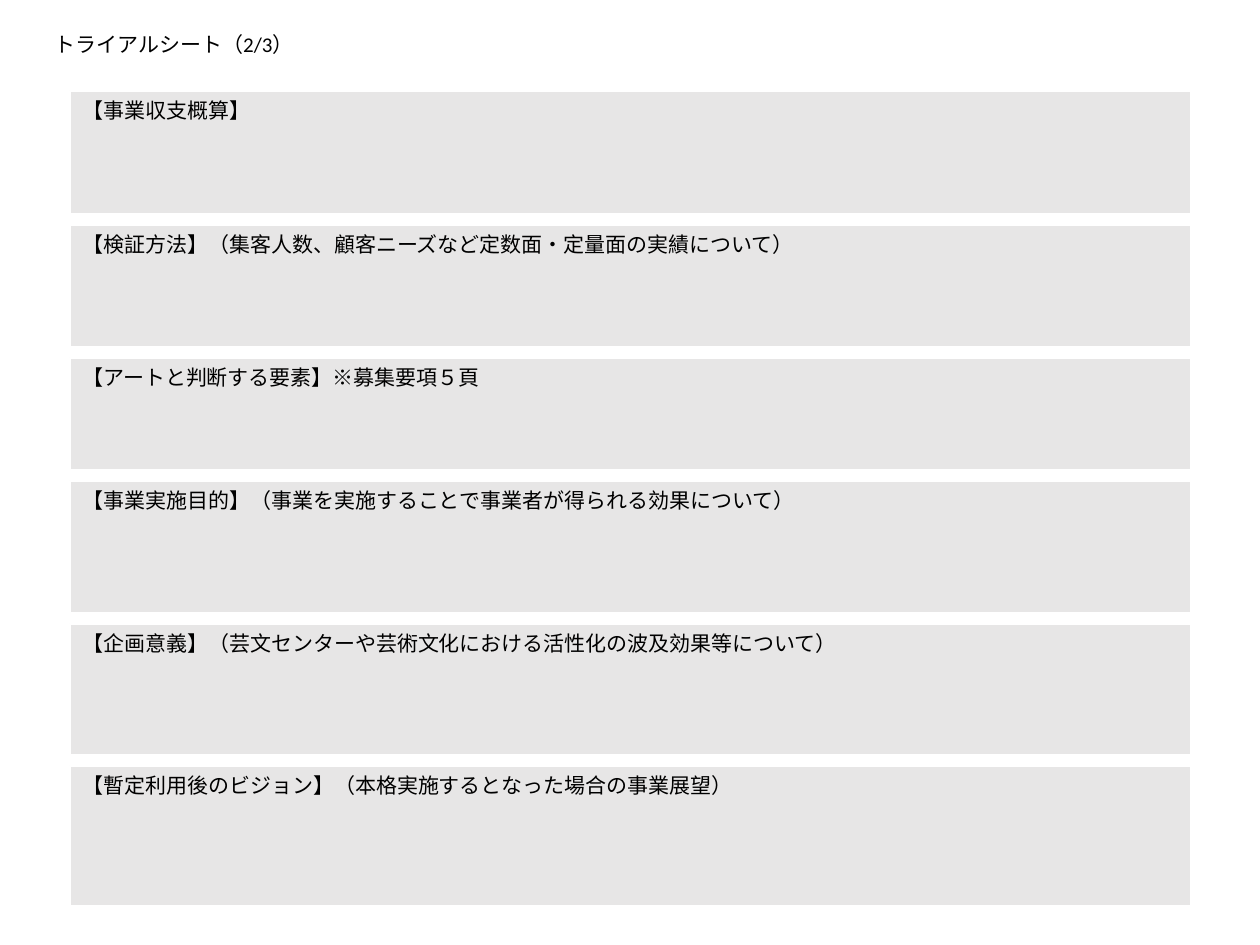
import pptx
import pptx.util
import pptx.dml.color
import pptx.enum.shapes
import pptx.enum.text

PX = pptx.util.Inches(1) // 126
THEME = {
    "font": "Calibri",
    "size": pptx.util.Pt(12),
    "line": pptx.util.Pt(1.5),
    "text": pptx.dml.color.RGBColor.from_string("000000"),
    "panel": pptx.dml.color.RGBColor.from_string("E7E6E6"),
    "border": pptx.dml.color.RGBColor.from_string("FFFFFF"),
}


def write_text(shape, text):
    text_frame = shape.text_frame
    text_frame.text = text
    text_frame.word_wrap = True
    text_frame.vertical_anchor = pptx.enum.text.MSO_ANCHOR.TOP
    paragraph = text_frame.paragraphs[0]
    paragraph.alignment = pptx.enum.text.PP_ALIGN.LEFT
    font = paragraph.runs[0].font
    font.name = THEME["font"]
    font.size = THEME["size"]
    font.color.rgb = THEME["text"]


presentation = pptx.Presentation()
presentation.slide_width = 1260 * PX
presentation.slide_height = 945 * PX
slide = presentation.slides.add_slide(presentation.slide_layouts[6])

# Sheet title
title = slide.shapes.add_textbox(42 * PX, 25 * PX, 269 * PX, 38 * PX)
write_text(title, "トライアルシート（2/3）")

# Answer panels, stacked with an equal gap
panels = [
    ("【事業収支概算】", 123),
    ("【検証方法】（集客人数、顧客ニーズなど定数面・定量面の実績について）", 122),
    ("【アートと判断する要素】※募集要項５頁", 112),
    ("【事業実施目的】（事業を実施することで事業者が得られる効果について）", 132),
    ("【企画意義】（芸文センターや芸術文化における活性化の波及効果等について）", 131),
    ("【暫定利用後のビジョン】（本格実施するとなった場合の事業展望）", 140),
]
gap = 11
top = 91
for heading, height in panels:
    panel = slide.shapes.add_shape(
        pptx.enum.shapes.MSO_SHAPE.RECTANGLE,
        70 * PX, top * PX, 1121 * PX, height * PX)
    panel.shadow.inherit = False
    panel.fill.solid()
    panel.fill.fore_color.rgb = THEME["panel"]
    panel.line.color.rgb = THEME["border"]
    panel.line.width = THEME["line"]
    write_text(panel, heading)
    top += height + gap

presentation.save("out.pptx")
